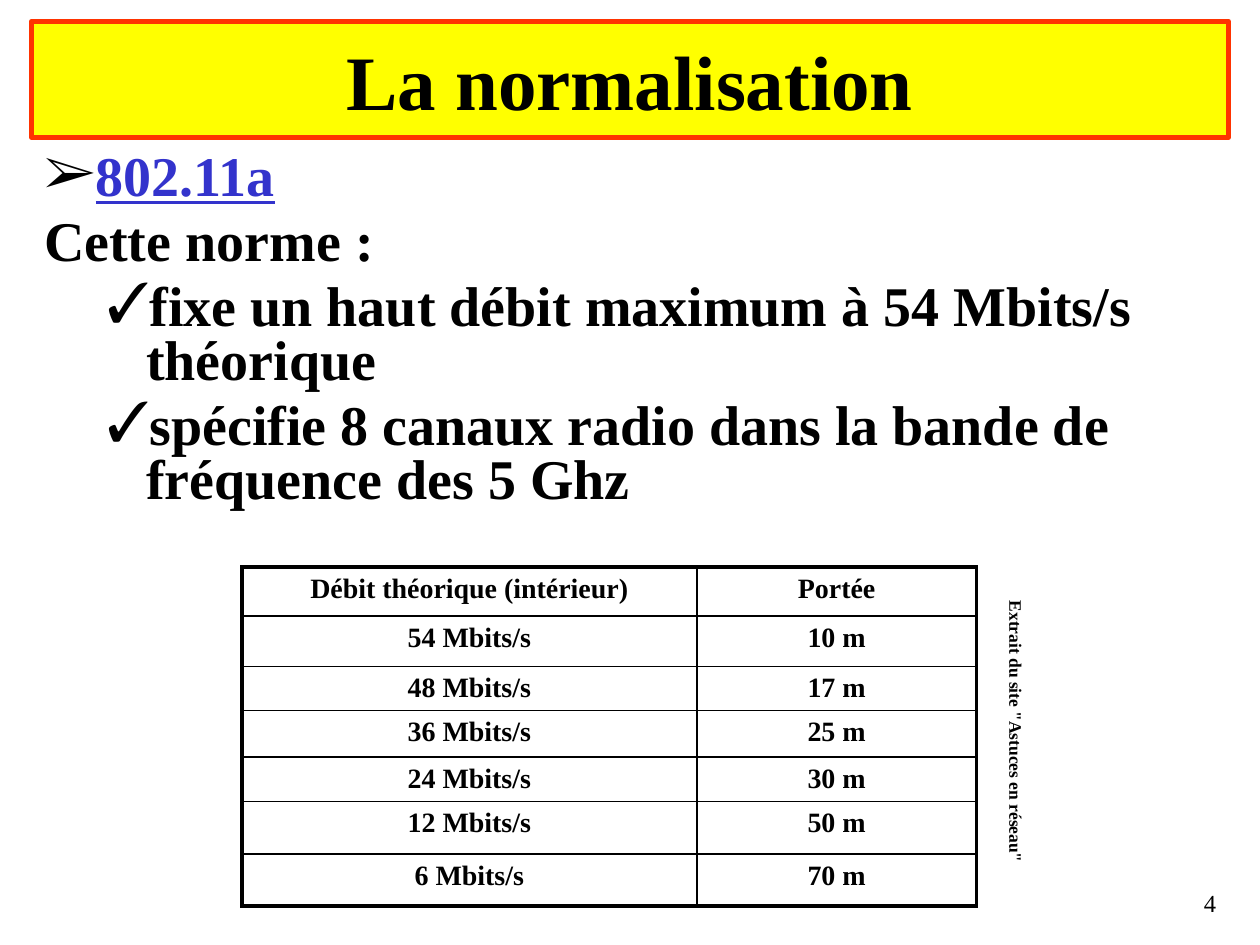
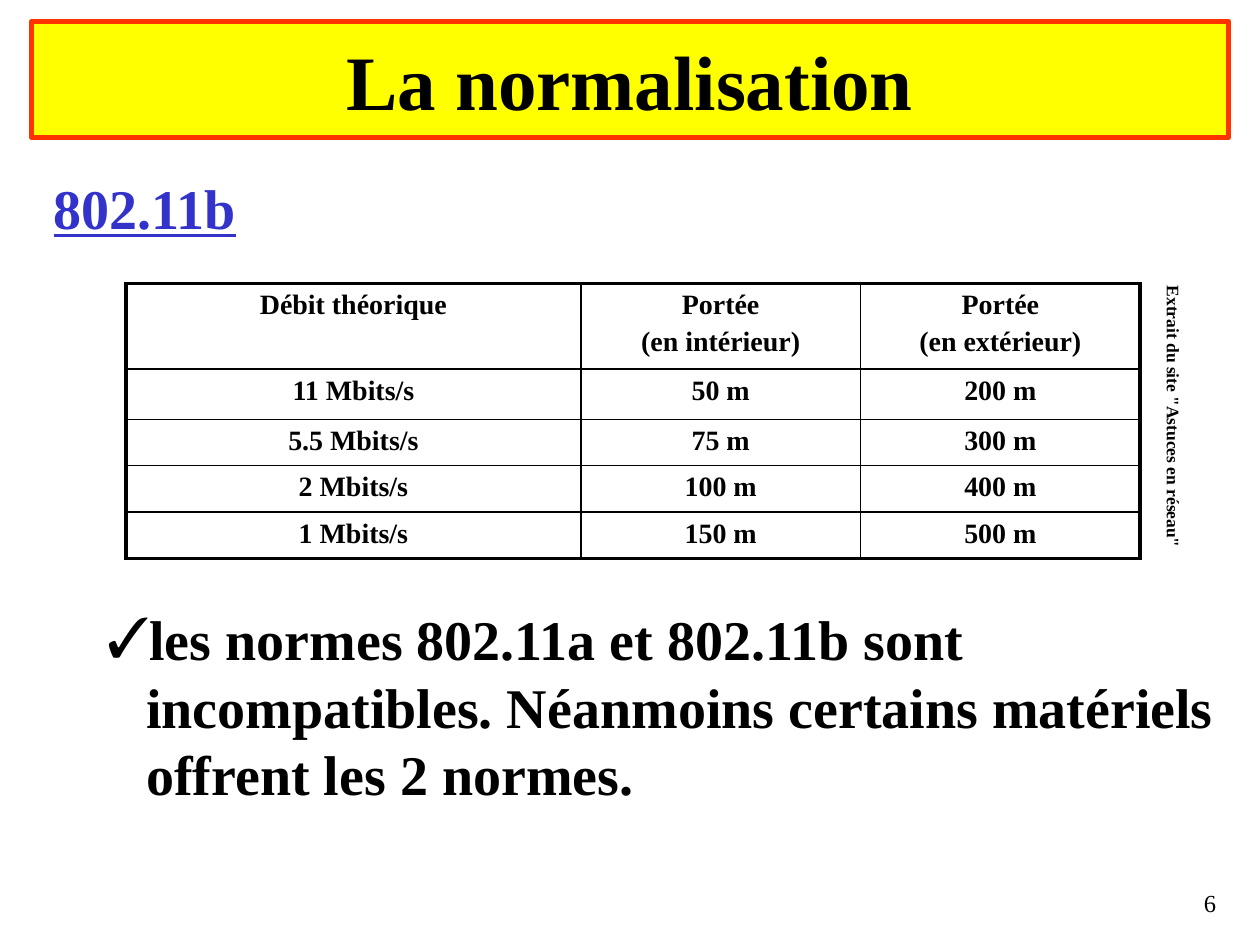
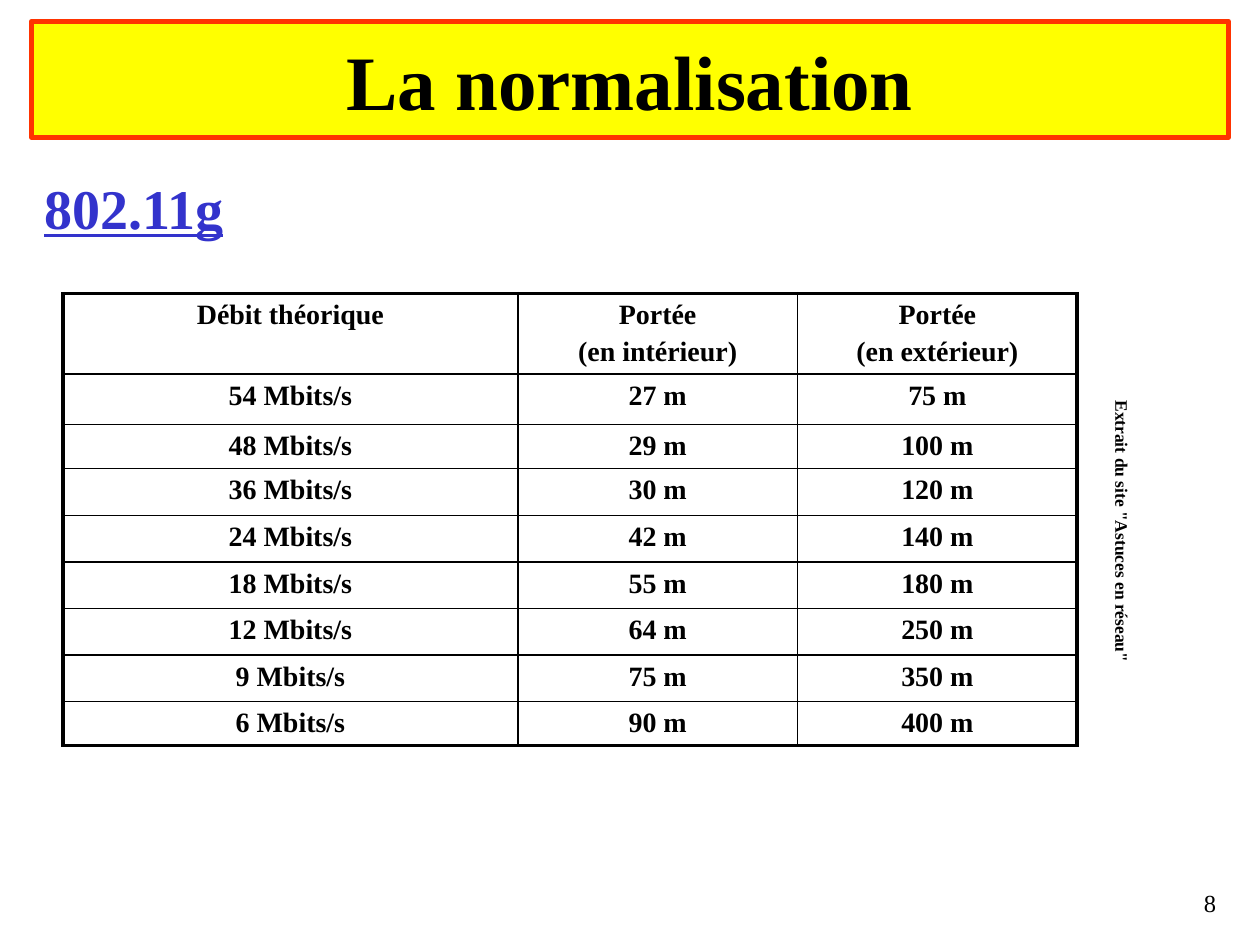
from dataclasses import dataclass

from lxml import etree
from pptx import Presentation
from pptx.dml.color import RGBColor
from pptx.enum import text
from pptx.oxml.ns import qn
from pptx.util import Inches, Pt


@dataclass(frozen=True)
class Theme:
    font: str = "Times New Roman"
    ink: str = "000000"
    accent: str = "3333CC"
    band: str = "FFFF00"
    band_line: str = "FF3300"
    title: int = 44
    body: int = 32
    cell: int = 16
    number: int = 14
    note: int = 10
    outer: float = 2.25
    inner: float = 1


T = Theme()
CENTER, RIGHT = text.PP_ALIGN.CENTER, text.PP_ALIGN.RIGHT


def write(tf, content, size=T.body, color=T.ink, bold=True, underline=False, align=None,
          level=0, indent=None, bullet=None, spacing=None, before=None):
    """Add one formatted paragraph; indent is (left margin, first line), before is a percentage."""
    p = tf.add_paragraph() if tf.text else tf.paragraphs[0]
    p.level, p.alignment, p.line_spacing = level, align, spacing
    pPr = p._p.get_or_add_pPr()
    if before:
        gap = etree.SubElement(pPr, qn("a:spcBef"))
        etree.SubElement(gap, qn("a:spcPct"), val=str(before * 1000))
    if indent:
        pPr.set("marL", str(Inches(indent[0])))
        pPr.set("indent", str(Inches(indent[1])))
    if bullet:
        clr = etree.SubElement(pPr, qn("a:buClr"))
        etree.SubElement(clr, qn("a:srgbClr"), val=T.ink)
        etree.SubElement(pPr, qn("a:buFont"), typeface=T.font)
        etree.SubElement(pPr, qn("a:buChar"), char=bullet)
    else:
        etree.SubElement(pPr, qn("a:buNone"))
    r = p.add_run()
    r.text = content
    f = r.font
    f.name, f.size, f.bold, f.underline = T.font, Pt(size), bold, underline
    f.color.rgb = RGBColor.from_string(color)


def place(sp, box):
    """Move a shape to (left, top, width, height) in inches."""
    sp.left, sp.top, sp.width, sp.height = map(Inches, box)


# Paragraph formats and table headings used on several slides
main = dict(indent=(0.38, -0.38), before=20)
check = dict(level=1, indent=(0.81, -0.31), before=20, bullet="✓")
heading = dict(color=T.accent, underline=True)
tight = dict(spacing=0.8)
ranges = ["Débit théorique", "Portée\n(en intérieur)", "Portée\n(en extérieur)"]

slides = [
    dict(
        number="4",
        body_box=(0.25, 1.17, 9.5, 3.08),
        body=[
            ("802.11a", main | heading | tight | dict(bullet="➢")),
            ("Cette norme :", main | tight),
            ("fixe un haut débit maximum à 54 Mbits/s théorique", check | tight),
            ("spécifie 8 canaux radio dans la bande de fréquence des 5 Ghz", check | tight),
        ],
        table_at=(1.92, 4.5),
        heights=[0.39, 0.4, 0.35, 0.37, 0.35, 0.42, 0.41],
        rows=[
            ["Débit théorique (intérieur)", "Portée"],
            ["54 Mbits/s", "10 m"],
            ["48 Mbits/s", "17 m"],
            ["36 Mbits/s", "25 m"],
            ["24 Mbits/s", "30 m"],
            ["12 Mbits/s", "50 m"],
            ["6 Mbits/s", "70 m"],
        ],
        note_at=(7.83, 4.67),
    ),
    dict(
        number="6",
        label="802.11b",
        body_box=(0.25, 4.75, 9.5, 1.75),
        body=[("les normes 802.11a et 802.11b sont incompatibles. "
               "Néanmoins certains matériels offrent les 2 normes.", check)],
        table_at=(1, 2.25),
        heights=[0.64, 0.4, 0.35, 0.37, 0.35],
        rows=[
            ranges,
            ["11 Mbits/s", "50 m", "200 m"],
            ["5.5 Mbits/s", "75 m", "300 m"],
            ["2 Mbits/s", "100 m", "400 m"],
            ["1 Mbits/s", "150 m", "500 m"],
        ],
        note_at=(9.08, 2.17),
    ),
    dict(
        number="8",
        body_box=(0.25, 1.33, 9.5, 0.75),
        body=[("802.11g", main | heading)],
        table_at=(0.5, 2.33),
        heights=[0.64, 0.4, 0.35] + [0.37] * 5 + [0.35],
        rows=[
            ranges,
            ["54 Mbits/s", "27 m", "75 m"],
            ["48 Mbits/s", "29 m", "100 m"],
            ["36 Mbits/s", "30 m", "120 m"],
            ["24 Mbits/s", "42 m", "140 m"],
            ["18 Mbits/s", "55 m", "180 m"],
            ["12 Mbits/s", "64 m", "250 m"],
            ["9 Mbits/s", "75 m", "350 m"],
            ["6 Mbits/s", "90 m", "400 m"],
        ],
        note_at=(8.67, 3.08),
    ),
]

prs = Presentation()
prs.slide_width, prs.slide_height = Inches(10), Inches(7.5)

for data in slides:
    s = prs.slides.add_slide(prs.slide_layouts[1])

    # Title band
    sp = s.shapes.title
    place(sp, (0.25, 0.17, 9.5, 0.92))
    sp.fill.solid()
    sp.fill.fore_color.rgb = RGBColor.from_string(T.band)
    sp.line.color.rgb = RGBColor.from_string(T.band_line)
    sp.line.width = Pt(3)
    sp.text_frame.auto_size = text.MSO_AUTO_SIZE.NONE
    write(sp.text_frame, "La normalisation", size=T.title, align=CENTER)

    # Body list
    sp = s.placeholders[1]
    place(sp, data["body_box"])
    sp.text_frame.auto_size = text.MSO_AUTO_SIZE.NONE
    for content, fmt in data["body"]:
        write(sp.text_frame, content, **fmt)

    # Separate heading above the table
    if "label" in data:
        sp = s.shapes.add_textbox(*map(Inches, (0.33, 1.33, 1.67, 0.63)))
        sp.text_frame.word_wrap = False
        write(sp.text_frame, data["label"], **heading)

    # Range table: thick frame, thin inner rules
    rows = data["rows"]
    widths = [3.61, 2.22, 2.22][:len(rows[0])]
    left, top = data["table_at"]
    table = s.shapes.add_table(len(rows), len(widths), Inches(left), Inches(top),
                               Inches(sum(widths)), Inches(sum(data["heights"]))).table
    table.first_row = table.horz_banding = False
    for col, width in zip(table.columns, widths):
        col.width = Inches(width)
    for i, (row, height) in enumerate(zip(rows, data["heights"])):
        table.rows[i].height = Inches(height)
        for j, content in enumerate(row):
            cell = table.cell(i, j)
            for line in content.split("\n"):
                write(cell.text_frame, line, size=T.cell, align=CENTER, before=20)
            edges = {"lnL": j == 0, "lnR": j == len(row) - 1,
                     "lnT": i == 0, "lnB": i == len(rows) - 1}
            tcPr = cell._tc.get_or_add_tcPr()
            for tag, is_outer in edges.items():
                ln = etree.SubElement(tcPr, qn(f"a:{tag}"),
                                      w=str(Pt(T.outer if is_outer else T.inner)))
                fill = etree.SubElement(ln, qn("a:solidFill"))
                etree.SubElement(fill, qn("a:srgbClr"), val=T.ink)
            cell.fill.background()

    # Vertical credit beside the table
    sp = s.shapes.add_textbox(*map(Inches, (*data["note_at"], 0.37, 2.5)))
    tf = sp.text_frame
    tf.word_wrap = True
    tf.auto_size = text.MSO_AUTO_SIZE.SHAPE_TO_FIT_TEXT
    tf._txBody.bodyPr.set("vert", "eaVert")
    write(tf, 'Extrait du site "Astuces en réseau"', size=T.note, before=50)

    # Slide number
    sp = s.shapes.add_textbox(*map(Inches, (7.67, 7, 2.08, 0.33)))
    sp.text_frame.word_wrap = True
    write(sp.text_frame, data["number"], size=T.number, bold=False, align=RIGHT)

prs.save("out.pptx")
